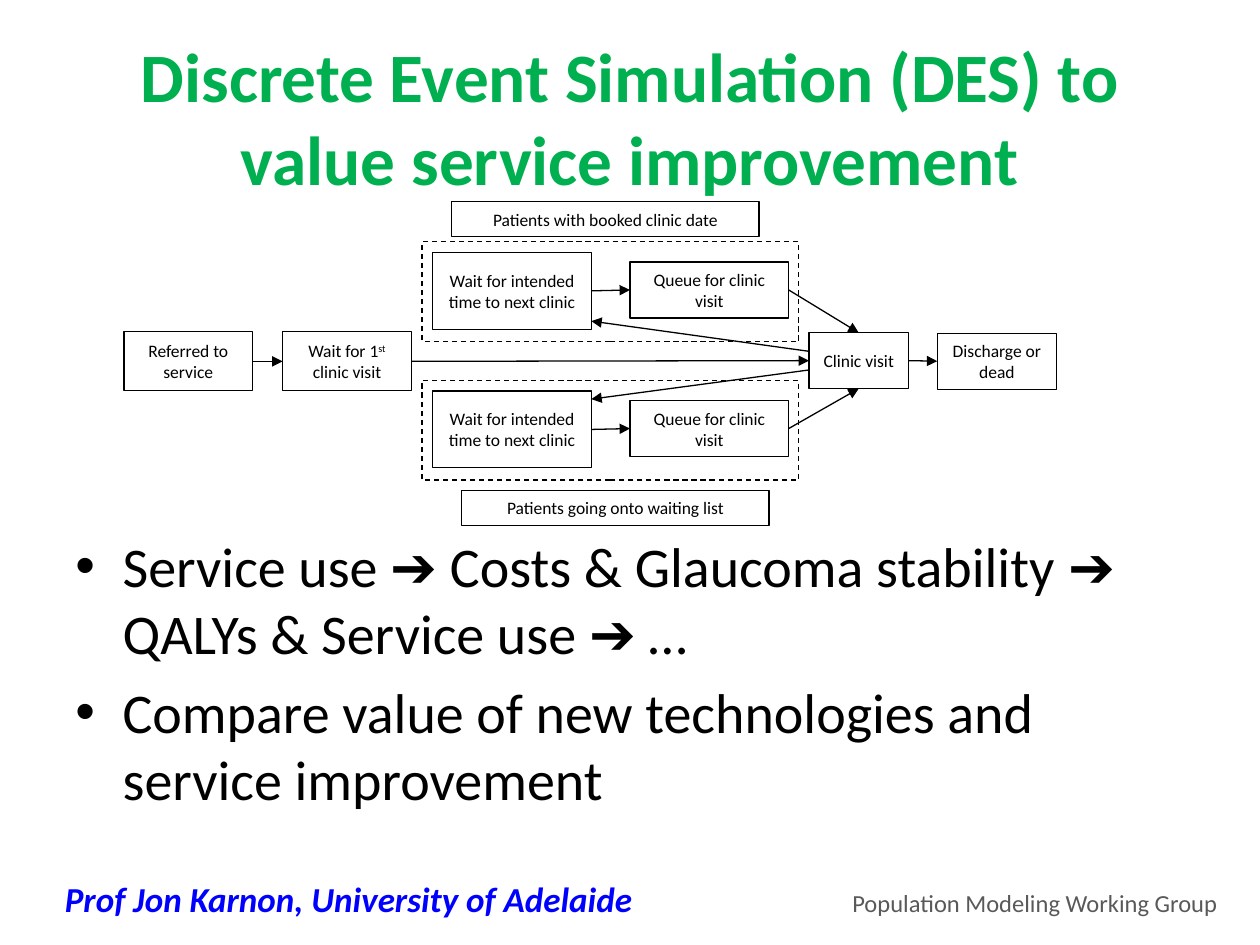
from dataclasses import dataclass

from lxml import etree
from pptx import Presentation
from pptx.dml.color import RGBColor
from pptx.enum.dml import MSO_LINE
from pptx.enum.shapes import MSO_CONNECTOR, MSO_SHAPE
from pptx.enum.text import MSO_ANCHOR, PP_ALIGN
from pptx.oxml.ns import qn
from pptx.util import Pt

RECT = MSO_SHAPE.RECTANGLE
STRAIGHT = MSO_CONNECTOR.STRAIGHT
DASH = MSO_LINE.DASH
MIDDLE = MSO_ANCHOR.MIDDLE
LEFT, CENTER = PP_ALIGN.LEFT, PP_ALIGN.CENTER
TOP_SIDE, LEFT_SIDE, BOTTOM_SIDE, RIGHT_SIDE = range(4)


@dataclass(frozen=True)
class Theme:
    font: str = "Calibri"
    ink: RGBColor = RGBColor(0, 0, 0)
    title: RGBColor = RGBColor(0x00, 0xB0, 0x50)
    author: RGBColor = RGBColor(0x00, 0x00, 0xFF)
    group: RGBColor = RGBColor(0x59, 0x59, 0x59)
    title_size: float = 39.6
    body_size: float = 32
    author_size: float = 20
    group_size: float = 14
    box_size: float = 10
    line: float = 0.75


THEME = Theme()


def style_text(tf, size, color, align=LEFT, bold=False, italic=False):
    tf.word_wrap = True
    for p in tf.paragraphs:
        p.alignment = align
        for r in p.runs:
            r.font.name, r.font.size = THEME.font, Pt(size)
            r.font.color.rgb = color
            r.font.bold, r.font.italic = bold, italic


def add_text(slide, box, text, size, color, **style):
    tf = slide.shapes.add_textbox(*map(Pt, box)).text_frame
    tf.text = text
    style_text(tf, size, color, **style)
    return tf


def add_title(slide, box, text):
    tf = add_text(slide, box, text, THEME.title_size, THEME.title, align=CENTER, bold=True)
    tf.vertical_anchor = MIDDLE


def add_bullets(slide, box, items):
    tf = add_text(slide, box, "\n".join(items), THEME.body_size, THEME.ink)
    for p in tf.paragraphs:
        p.space_before = Pt(6.4)
        pPr = p._p.get_or_add_pPr()
        pPr.set("marL", str(Pt(27)))
        pPr.set("indent", str(Pt(-27)))
        etree.SubElement(pPr, qn("a:buFont")).set("typeface", "Arial")
        etree.SubElement(pPr, qn("a:buChar")).set("char", "•")


def add_box(slide, box, *parts):
    """Outlined box; a second text part is set as superscript."""
    sp = slide.shapes.add_shape(RECT, *map(Pt, box))
    sp.shadow.inherit = False
    sp.fill.background()
    sp.line.color.rgb = THEME.ink
    sp.line.width = Pt(THEME.line)
    tf = sp.text_frame
    tf.vertical_anchor = MIDDLE
    for part in parts:
        tf.paragraphs[0].add_run().text = part
    style_text(tf, THEME.box_size, THEME.ink, align=CENTER)
    if len(parts) > 1:
        tf.paragraphs[0].runs[1].font._element.set("baseline", "30000")
    return sp


def add_arrow(slide, x1=0, y1=0, x2=0, y2=0):
    line = slide.shapes.add_connector(STRAIGHT, x1, y1, x2, y2)
    line.line.color.rgb = THEME.ink
    line.line.width = Pt(THEME.line)
    etree.SubElement(line.line._get_or_add_ln(), qn("a:tailEnd")).set("type", "triangle")
    etree.SubElement(line._element.spPr, qn("a:effectLst"))
    return line


def join(slide, start, end, start_side=RIGHT_SIDE, end_side=LEFT_SIDE):
    line = add_arrow(slide)
    line.begin_connect(start, start_side)
    line.end_connect(end, end_side)


def add_lane(slide, box):
    """Dashed lane with a waiting box that leads to a queue box."""
    x, y, w, h = box
    wait = add_box(slide, (x + 6, y + 6, 90.7, 44), "Wait for intended time to next clinic")
    queue = add_box(slide, (x + w - 96.5, y + 11.5, 90.7, 32), "Queue for clinic visit")
    add_box(slide, box).line.dash_style = DASH
    join(slide, wait, queue)
    return wait, queue


def add_patient_flow(slide, box):
    x, y, w, h = box
    referred = add_box(slide, (x, y + 74.4, 73.6, 33.8), "Referred to service")
    first = add_box(slide, (x + 90.7, y + 74.4, 73.6, 33.8), "Wait for 1", "st", " clinic visit")
    booked_wait, booked_queue = add_lane(slide, (x + 170.4, y + 23, 215.3, 57))
    list_wait, list_queue = add_lane(slide, (x + 170.4, y + 102.2, 215.3, 57))
    add_box(slide, (x + 187.2, y, 175.7, 20), "Patients with booked clinic date")
    add_box(slide, (x + 193, y + h - 20, 175.7, 20), "Patients going onto waiting list")
    clinic = add_box(slide, (x + 391.5, y + 74.9, 56.8, 32), "Clinic visit")
    leaving = add_box(slide, (x + w - 68, y + 75.2, 68, 32), "Discharge or dead")

    join(slide, referred, first)
    join(slide, first, clinic)
    join(slide, clinic, leaving)
    join(slide, booked_queue, clinic, end_side=TOP_SIDE)
    join(slide, list_queue, clinic, end_side=BOTTOM_SIDE)

    third, inset = clinic.height // 3, Pt(4.7)
    returns = (
        (booked_wait, third, booked_wait.height - inset),
        (list_wait, 2 * third, inset),
    )
    for wait, leave, arrive in returns:
        add_arrow(slide, clinic.left, clinic.top + leave,
                  wait.left + wait.width, wait.top + arrive)


def add_footer(slide, box):
    x, y, w, h = box
    add_text(slide, (x, y, 426, 32), "Prof Jon Karnon, University of Adelaide",
             THEME.author_size, THEME.author, bold=True, italic=True)
    add_text(slide, (x + w - 224, y + 6, 224, 24), "Population Modeling Working Group",
             THEME.group_size, THEME.group)


def main():
    prs = Presentation()
    prs.slide_width, prs.slide_height = Pt(720), Pt(540)
    slide = prs.slides.add_slide(prs.slide_layouts[6])
    add_title(slide, (36, 21.6, 648, 90), "Discrete Event Simulation (DES) to value service improvement")
    add_bullets(slide, (36, 300.2, 648, 182), (
        "Service use ➔ Costs & Glaucoma stability ➔ QALYs & Service use ➔ …",
        "Compare value of new technologies and service improvement",
    ))
    add_patient_flow(slide, (70.8, 115.2, 532.8, 185))
    add_footer(slide, (30, 498, 674, 32))
    prs.save("out.pptx")


if __name__ == "__main__":
    main()
